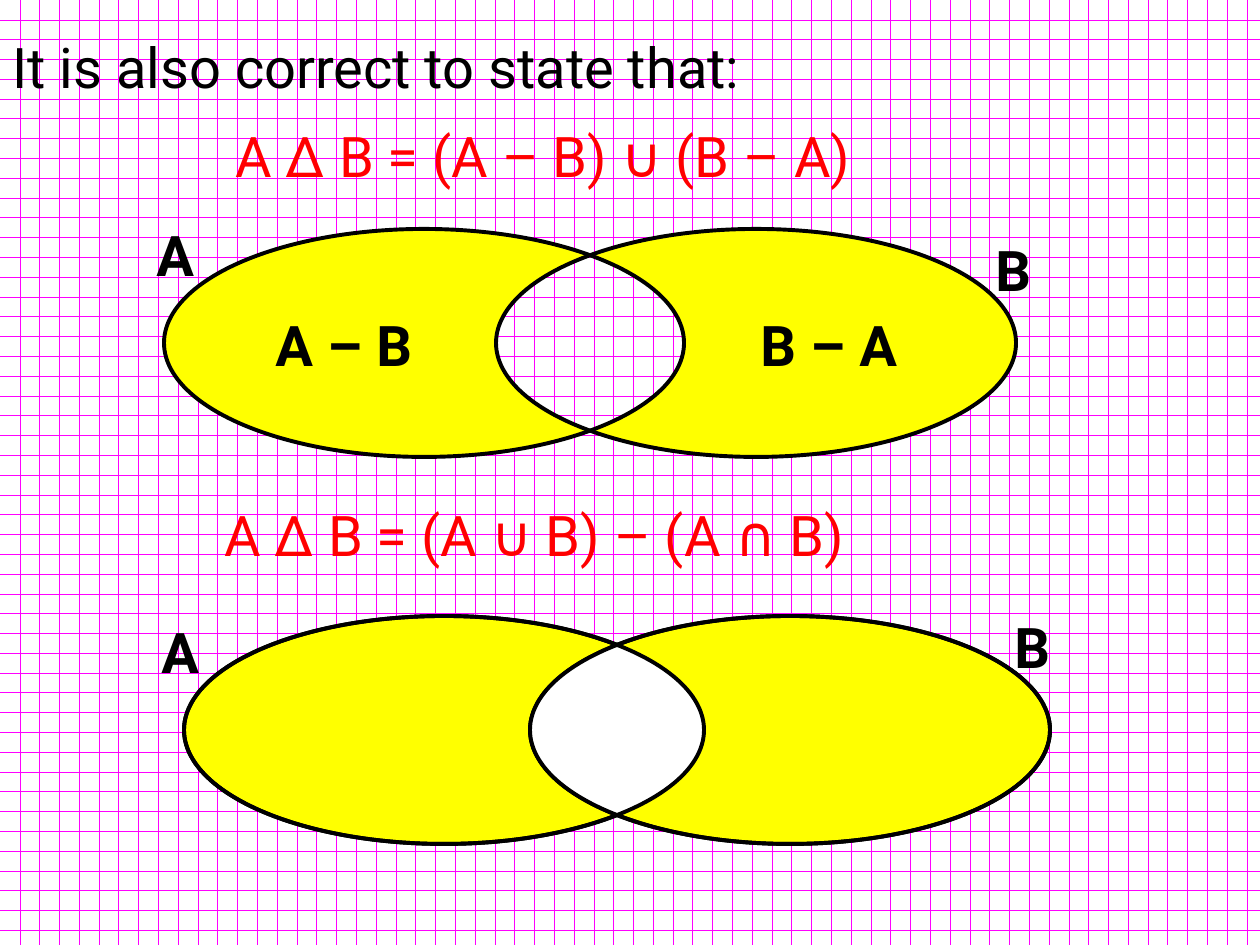
from dataclasses import dataclass
from math import acos, cos, pi, sin

from pptx import Presentation
from pptx import util as u
from pptx.dml.color import RGBColor
from pptx.enum import dml, shapes, text

PX = 914400 / 126  # EMU in one px


def px(n):
    return u.Emu(round(n * PX))


@dataclass(frozen=True)
class Theme:
    font: str = "Roboto"
    size: float = 32
    ink: str = "000000"
    formula: str = "FF0000"
    paper: str = "FFFFFF"
    grid: str = "FF00FF"
    region: str = "FFFF00"
    outline: float = 2.25
    thin: float = 0.75


@dataclass(frozen=True)
class Oval:
    x: int
    y: int
    w: int = 520
    h: int = 228

    def arc(self, start, end, steps=48):
        """Points along the outline, clockwise from the right for rising angles."""
        angles = [start + (end - start) * i / steps for i in range(steps + 1)]
        return [(px(self.x + self.w / 2 * (1 + cos(a))),
                 px(self.y + self.h / 2 * (1 + sin(a)))) for a in angles]


def regions(a, b):
    """Outlines of A - B, B - A and the overlap of two equal ovals."""
    t = acos((b.x - a.x) / a.w)  # angle at which the ovals cross
    return (a.arc(t, 2 * pi - t) + b.arc(pi + t, pi - t),
            b.arc(pi + t, 3 * pi - t) + a.arc(t, -t),
            a.arc(-t, t) + b.arc(pi - t, pi + t))


class Board:
    def __init__(self, prs, theme):
        self.theme = theme
        self.s = prs.slides.add_slide(prs.slide_layouts[5])
        fill = self.s.background.fill
        fill.patterned()
        fill.pattern = dml.MSO_PATTERN.DOTTED_GRID
        fill.fore_color.rgb = RGBColor.from_string(theme.grid)
        fill.back_color.rgb = RGBColor.from_string(theme.paper)

    def put_text(self, sp, words, color=None, bold=False, wrap=True):
        tf = sp.text_frame
        tf.word_wrap = wrap
        tf.auto_size = text.MSO_AUTO_SIZE.NONE
        tf.vertical_anchor = text.MSO_ANCHOR.TOP
        p = tf.paragraphs[0]
        p.alignment = text.PP_ALIGN.LEFT
        r = p.add_run()
        r.text = words
        r.font.name = self.theme.font
        r.font.size = u.Pt(self.theme.size)
        r.font.bold = bold
        r.font.color.rgb = RGBColor.from_string(color or self.theme.ink)

    def title(self, words, x, y, w, h):
        sp = self.s.shapes.title
        sp.left, sp.top, sp.width, sp.height = map(px, (x, y, w, h))
        self.put_text(sp, words)

    def label(self, words, x, y, w=74, h=80, **fmt):
        sp = self.s.shapes.add_textbox(px(x), px(y), px(w), px(h))
        self.put_text(sp, words, **fmt)

    def paint(self, sp, fill, width):
        sp.shadow.inherit = False
        if fill:
            sp.fill.solid()
            sp.fill.fore_color.rgb = RGBColor.from_string(fill)
        else:
            sp.fill.background()
        sp.line.color.rgb = RGBColor.from_string(self.theme.ink)
        sp.line.width = u.Pt(width)

    def oval(self, o, fill=None):
        sp = self.s.shapes.add_shape(shapes.MSO_SHAPE.OVAL,
                                     px(o.x), px(o.y), px(o.w), px(o.h))
        self.paint(sp, fill, self.theme.outline)

    def region(self, points, fill):
        builder = self.s.shapes.build_freeform(*points[0])
        builder.add_line_segments(points[1:], close=True)
        self.paint(builder.convert_to_shape(), fill, self.theme.thin)


def main():
    prs = Presentation()
    prs.slide_width, prs.slide_height = px(1260), px(945)
    theme = Theme()
    board = Board(prs, theme)

    board.title("It is also correct to state that:", 0, 26, 1096, 81)

    # Union of the two differences
    a, b = Oval(164, 229), Oval(496, 229)
    only_a, only_b, _ = regions(a, b)
    for points in (only_b, only_a):
        board.region(points, theme.region)
    for o in (a, b):
        board.oval(o)

    # Union without the intersection
    a, b = Oval(184, 616), Oval(530, 616)
    for o in (a, b):
        board.oval(o, theme.region)
    board.region(regions(a, b)[2], theme.paper)
    for o in (a, b):
        board.oval(o)

    # Set names and region names
    for words, x, y in (("A", 144, 214), ("B", 983, 229),
                        ("A", 149, 611), ("B", 1002, 606)):
        board.label(words, x, y, bold=True)
    for words, x in (("A – B", 263), ("B – A", 748)):
        board.label(words, x, 304, w=203, bold=True)

    # Formulas
    for words, x, y in (("A Δ B = (A – B) ∪ (B – A)", 223, 115),
                        ("A Δ B = (A ∪ B) – (A ∩ B)", 212, 494)):
        board.label(words, x, y, w=835, color=theme.formula)

    prs.save("out.pptx")


if __name__ == "__main__":
    main()
